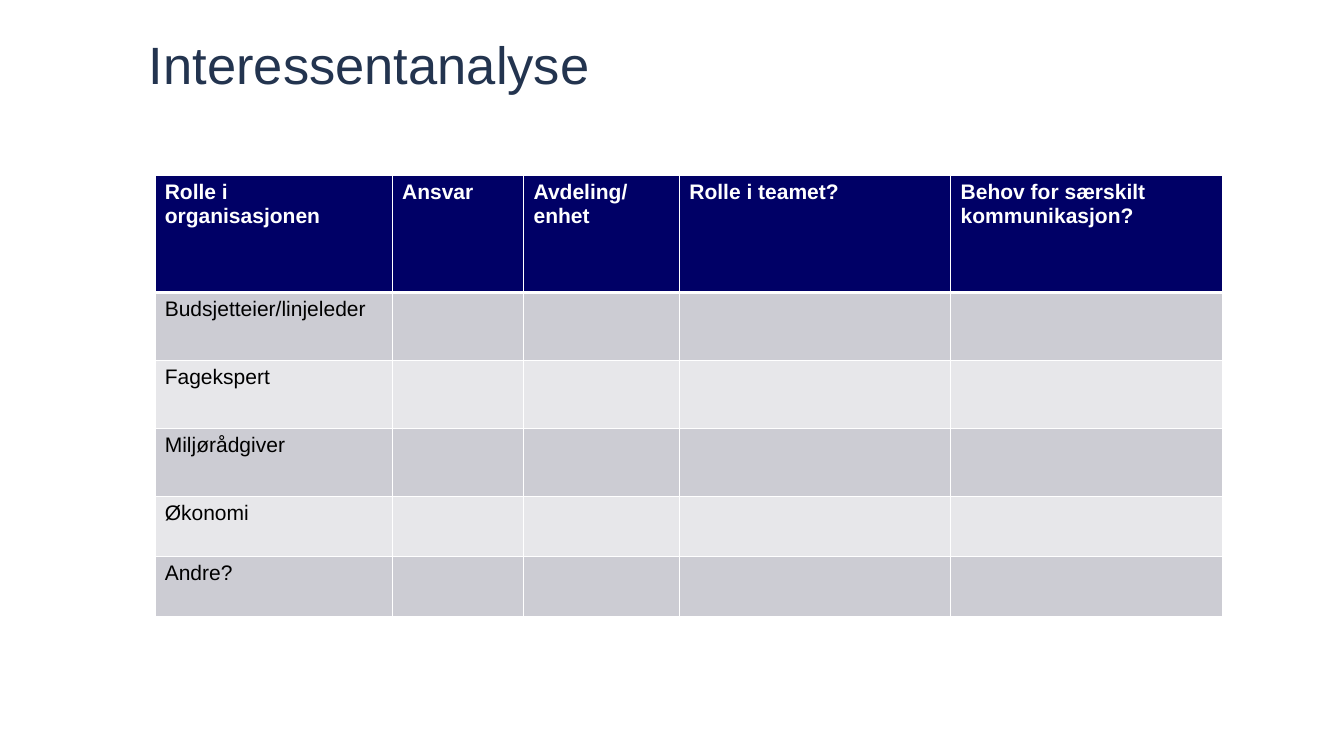
from dataclasses import dataclass

from lxml import etree
from pptx import Presentation
from pptx.dml.color import RGBColor
from pptx.enum.text import MSO_ANCHOR, MSO_AUTO_SIZE, PP_ALIGN
from pptx.oxml.ns import qn
from pptx.util import Inches, Pt

LEFT = PP_ALIGN.LEFT
TOP = MSO_ANCHOR.TOP
BOTTOM = MSO_ANCHOR.BOTTOM
NO_FIT = MSO_AUTO_SIZE.NONE
TITLE_ONLY = 5


@dataclass(frozen=True)
class Theme:
    font: str = "Arial"
    title_size: int = 50
    table_size: int = 20
    title: str = "23344F"
    header: str = "000066"
    bands: tuple = ("CCCCD3", "E7E7EA")
    white: str = "FFFFFF"
    black: str = "000000"
    thin: int = 1
    thick: int = 3


THEME = Theme()
HEADINGS = ["Rolle i organisasjonen", "Ansvar", "Avdeling/ enhet",
            "Rolle i teamet?", "Behov for særskilt kommunikasjon?"]
ROLES = ["Budsjetteier/linjeleder", "Fagekspert", "Miljørådgiver", "Økonomi", "Andre?"]
COLUMN_WIDTHS = [3.14, 1.74, 2.06, 3.59, 3.59]
ROW_HEIGHTS = [1.55, 0.9, 0.9, 0.9, 0.79, 0.79]


def write_text(frame, text, *, size, color, bold=False, spacing=1.0):
    """Write one formatted paragraph into a text frame."""
    para = frame.paragraphs[0]
    para.alignment = LEFT
    para.line_spacing = spacing
    para.font.size = Pt(size)
    if text:
        span = para.add_run()
        span.text = text
        span.font.name = THEME.font
        span.font.size = Pt(size)
        span.font.bold = bold
        span.font.color.rgb = RGBColor.from_string(color)


def set_borders(cell, widths):
    """Draw white cell borders; they must come before the cell fill."""
    properties = cell._tc.get_or_add_tcPr()
    for index, (side, width) in enumerate(widths.items()):
        line = etree.Element(qn(f"a:ln{side}"), w=str(Pt(width)))
        fill = etree.SubElement(line, qn("a:solidFill"))
        etree.SubElement(fill, qn("a:srgbClr"), val=THEME.white)
        properties.insert(index, line)


def format_cell(cell, text, row):
    """Style one cell as a header or as part of a banded row."""
    is_header = row == 0
    cell.margin_left = cell.margin_right = Inches(0.13)
    cell.margin_top = cell.margin_bottom = Inches(0.07)
    cell.vertical_anchor = TOP
    cell.fill.solid()
    fill = THEME.header if is_header else THEME.bands[(row - 1) % 2]
    cell.fill.fore_color.rgb = RGBColor.from_string(fill)
    set_borders(cell, {
        "L": THEME.thin,
        "R": THEME.thin,
        "T": THEME.thick if row == 1 else THEME.thin,
        "B": THEME.thick if is_header else THEME.thin,
    })
    write_text(cell.text_frame, text, size=THEME.table_size, bold=is_header,
               color=THEME.white if is_header else THEME.black)


def add_title(page, text):
    box = page.shapes.title
    box.left, box.top = Inches(1.97), Inches(0.51)
    box.width, box.height = Inches(12.8), Inches(0.76)
    frame = box.text_frame
    frame.margin_left = frame.margin_right = frame.margin_top = frame.margin_bottom = 0
    frame.vertical_anchor = BOTTOM
    frame.word_wrap = True
    frame.auto_size = NO_FIT
    write_text(frame, text, size=THEME.title_size, color=THEME.title, spacing=0.9)


def add_stakeholder_table(page):
    rows = [HEADINGS] + [[role] + [""] * (len(HEADINGS) - 1) for role in ROLES]
    table = page.shapes.add_table(
        len(rows), len(HEADINGS), Inches(2.05), Inches(2.32),
        Inches(sum(COLUMN_WIDTHS)), Inches(sum(ROW_HEIGHTS))).table
    for column, width in zip(table.columns, COLUMN_WIDTHS):
        column.width = Inches(width)
    for row, height in zip(table.rows, ROW_HEIGHTS):
        row.height = Inches(height)
    for row, texts in enumerate(rows):
        for column, text in enumerate(texts):
            format_cell(table.cell(row, column), text, row)


def main():
    deck = Presentation()
    deck.slide_width, deck.slide_height = Inches(17.78), Inches(10)
    page = deck.slides.add_slide(deck.slide_layouts[TITLE_ONLY])

    # Heading
    add_title(page, "Interessentanalyse")

    # Stakeholder roles
    add_stakeholder_table(page)

    deck.save("out.pptx")


if __name__ == "__main__":
    main()
